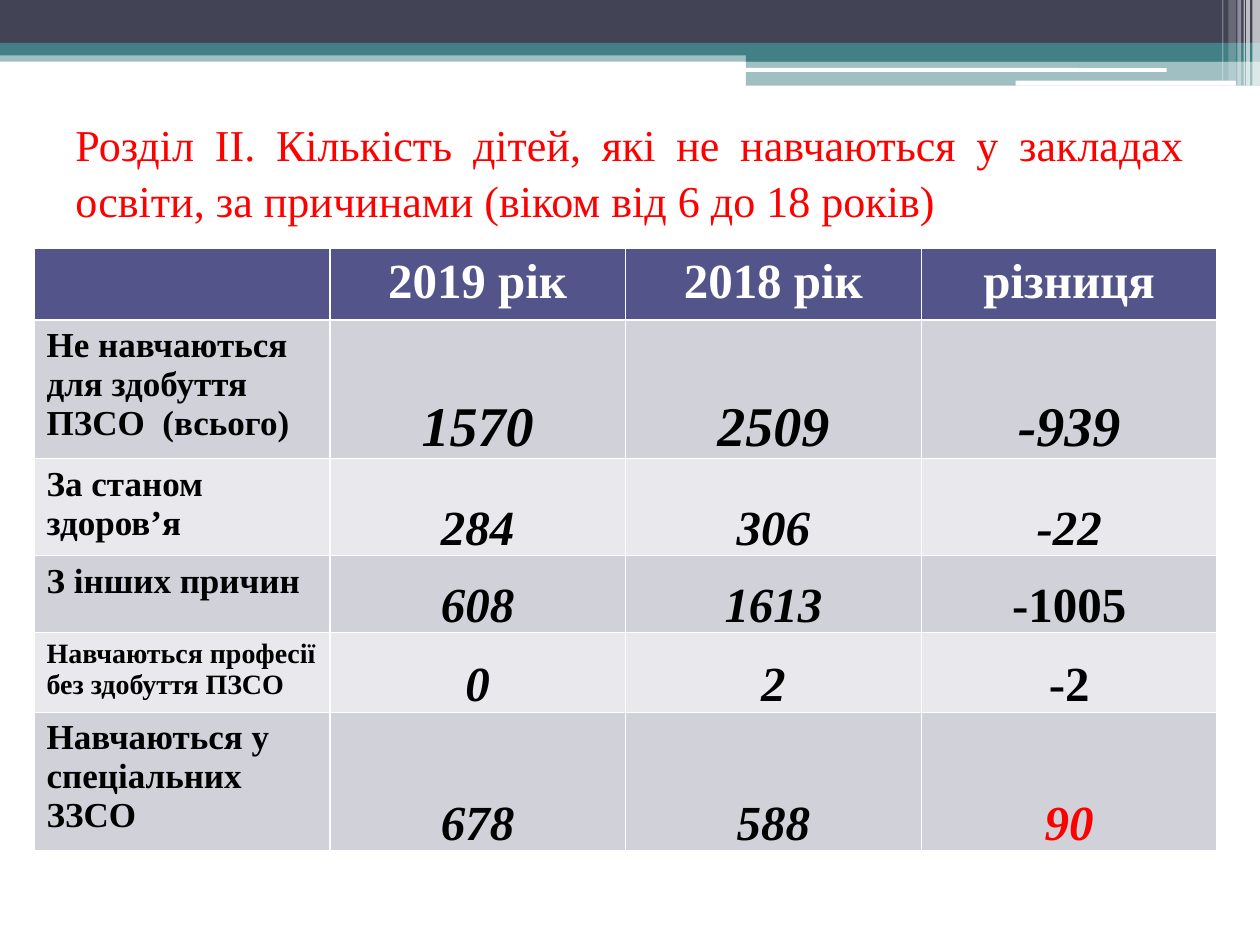
import pptx
import pptx.util
import pptx.dml.color
import pptx.enum.shapes
import pptx.enum.text
import pptx.oxml.ns
import lxml.etree

Color = pptx.dml.color.RGBColor
Shape = pptx.enum.shapes.MSO_SHAPE
Align = pptx.enum.text.PP_ALIGN
Anchor = pptx.enum.text.MSO_ANCHOR

WHITE = Color(0xFF, 0xFF, 0xFF)
BLACK = Color(0, 0, 0)
RED = Color(0xFF, 0, 0)
SLATE = Color(0x42, 0x44, 0x56)
TEAL = Color(0x43, 0x80, 0x86)
VIOLET = Color(0x53, 0x54, 0x8A)
BANDS = (Color(0xD1, 0xD1, 0xDA), Color(0xE9, 0xE9, 0xED))

COLS, ROWS = 100, 75


class Deck:
    font = "Times New Roman"

    def __init__(self):
        self.show = pptx.Presentation()
        self.show.slide_width = pptx.util.Inches(10)
        self.show.slide_height = pptx.util.Inches(7.5)
        self.slide = self.show.slides.add_slide(self.show.slide_layouts[6])

    def wide(self, cols):
        return round(self.show.slide_width * cols / COLS)

    def high(self, rows):
        return round(self.show.slide_height * rows / ROWS)

    def place(self, x, y, w, h):
        return self.wide(x), self.high(y), self.wide(w), self.high(h)

    def bar(self, box, color, alpha=100, kind=Shape.RECTANGLE):
        bar = self.slide.shapes.add_shape(kind, *self.place(*box))
        bar.shadow.inherit = False
        bar.fill.solid()
        bar.fill.fore_color.rgb = color
        bar.line.fill.background()
        if alpha < 100:
            tone = bar.element.spPr.find(".//" + pptx.oxml.ns.qn("a:srgbClr"))
            lxml.etree.SubElement(tone, pptx.oxml.ns.qn("a:alpha"), val=str(alpha * 1000))

    def label(self, frame, text, size, color, align, bold=False, slant=False):
        frame.text = text
        line = frame.paragraphs[0]
        line.alignment = align
        for run in line.runs:
            run.font.name = self.font
            run.font.size = pptx.util.Pt(size)
            run.font.color.rgb = color
            run.font.bold = bold
            run.font.italic = slant
        return line

    def title(self, box, text):
        frame = self.slide.shapes.add_textbox(*self.place(*box)).text_frame
        frame.word_wrap = True
        frame.vertical_anchor = Anchor.MIDDLE
        line = self.label(frame, text, 25.2, RED, Align.JUSTIFY)
        line.line_spacing = 1.07

    def cell(self, cell, text, fill, size, color, align, slant=False):
        cell.fill.solid()
        cell.fill.fore_color.rgb = fill
        if text:
            self.label(cell.text_frame, text, size, color, align, True, slant)

    def table(self, box, heights, heads, rows):
        table = self.slide.shapes.add_table(
            len(heights), len(heads), *self.place(*box)).table
        for row, high in zip(table.rows, heights):
            row.height = self.high(high)
        for cell, text in zip(table.rows[0].cells, heads):
            self.cell(cell, text, VIOLET, 28, WHITE, Align.CENTER)
        for at, (label, small, big, values) in enumerate(rows):
            fill = BANDS[at % 2]
            first, *rest = table.rows[at + 1].cells
            self.cell(first, label, fill, small, BLACK, Align.LEFT)
            for cell, (text, color, slant) in zip(rest, values):
                self.cell(cell, text, fill, big, color, Align.CENTER, slant)
                cell.vertical_anchor = Anchor.BOTTOM
                cell.margin_left = cell.margin_right = self.wide(0.1)
                cell.margin_top, cell.margin_bottom = self.high(0.1), 0


def plain(text, color=BLACK, slant=True):
    return text, color, slant


def main():
    deck = Deck()
    for box, color, alpha in (
        ((0, 4, 100, 0.9), TEAL, 50),
        ((0, 0, 100, 3.4), SLATE, 100),
        ((0, 3.4, 100, 1), TEAL, 100),
        ((59.2, 3.9, 40.8, 1), TEAL, 100),
        ((59.2, 4.8, 40.8, 2), TEAL, 50),
    ):
        deck.bar(box, color, alpha)
    for box in ((59.1, 5.4, 33.5, 0.3), (80.6, 6.4, 17.5, 0.4)):
        deck.bar(box, WHITE, kind=Shape.ROUNDED_RECTANGLE)
    for x, w, h, alpha in (
        (99.4, 0.6, 6.8, 65),
        (98.9, 0.3, 6.8, 65),
        (98.7, 0.1, 6.8, 60),
        (98.2, 0.3, 6.8, 40),
        (97.5, 0.6, 6.4, 20),
        (97, 0.1, 6.4, 30),
    ):
        deck.bar((x, 0, w, h), WHITE, alpha)
    deck.title((5, 7.6, 90, 11.8),
               "Розділ ІІ. Кількість дітей, які не навчаються у закладах освіти, "
               "за причинами (віком від 6 до 18 років)")
    deck.table(
        (2.7, 19.7, 93.9, 47.7),
        (5.7, 11, 7.7, 6.1, 6.3, 11),
        ("", "2019 рік", "2018 рік", "різниця"),
        (
            ("Не навчаються для здобуття ПЗСО  (всього)", 20, 32,
             (plain("1570"), plain("2509"), plain("-939"))),
            ("За станом здоров’я", 20, 28,
             (plain("284"), plain("306"), plain("-22"))),
            ("З інших причин", 20, 28,
             (plain("608"), plain("1613"), plain("-1005", slant=False))),
            ("Навчаються професії без здобуття ПЗСО", 16, 28,
             (plain("0"), plain("2"), plain("-2", slant=False))),
            ("Навчаються у спеціальних ЗЗСО", 20, 28,
             (plain("678"), plain("588"), plain("90", RED))),
        ),
    )
    deck.show.save("out.pptx")


if __name__ == "__main__":
    main()
